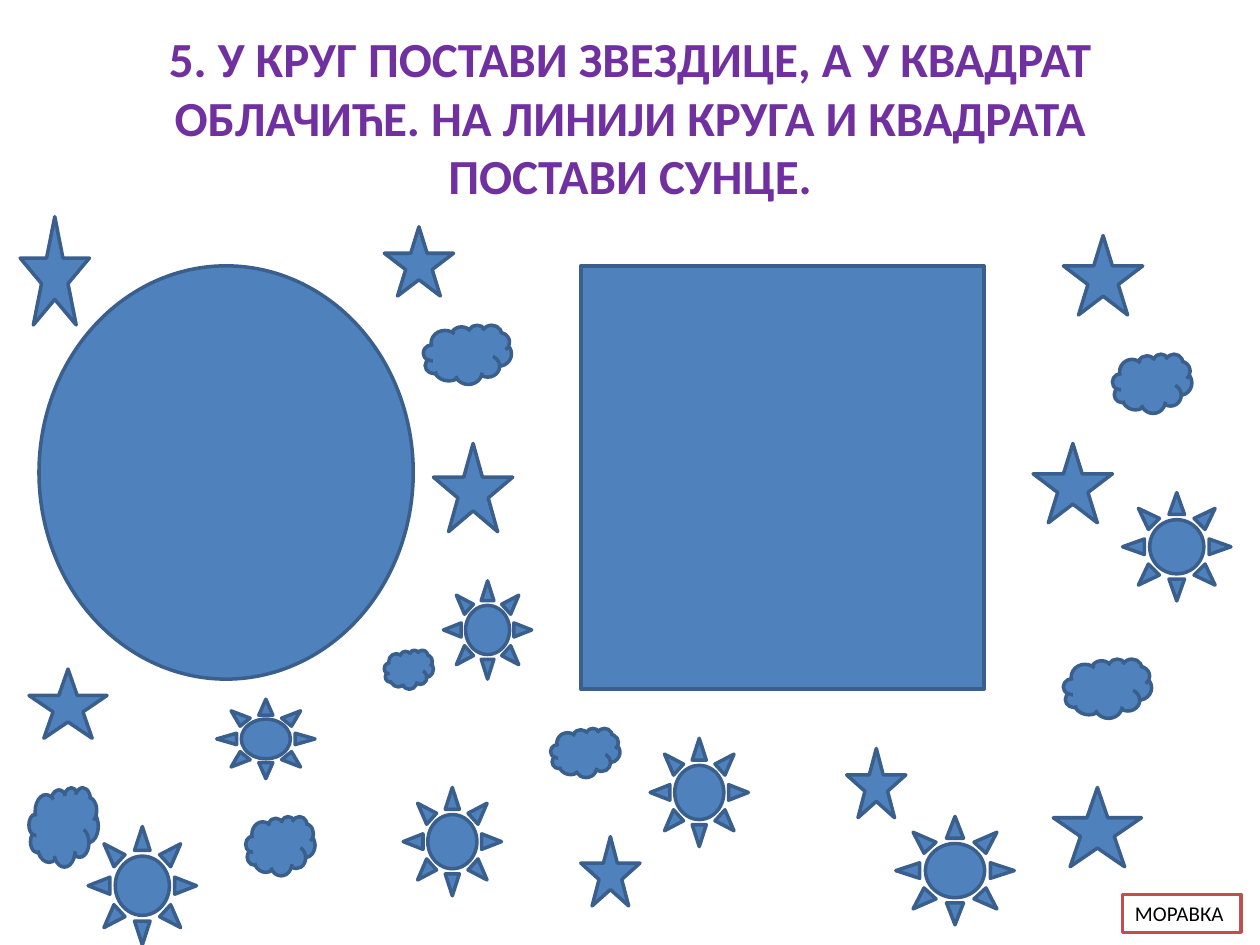
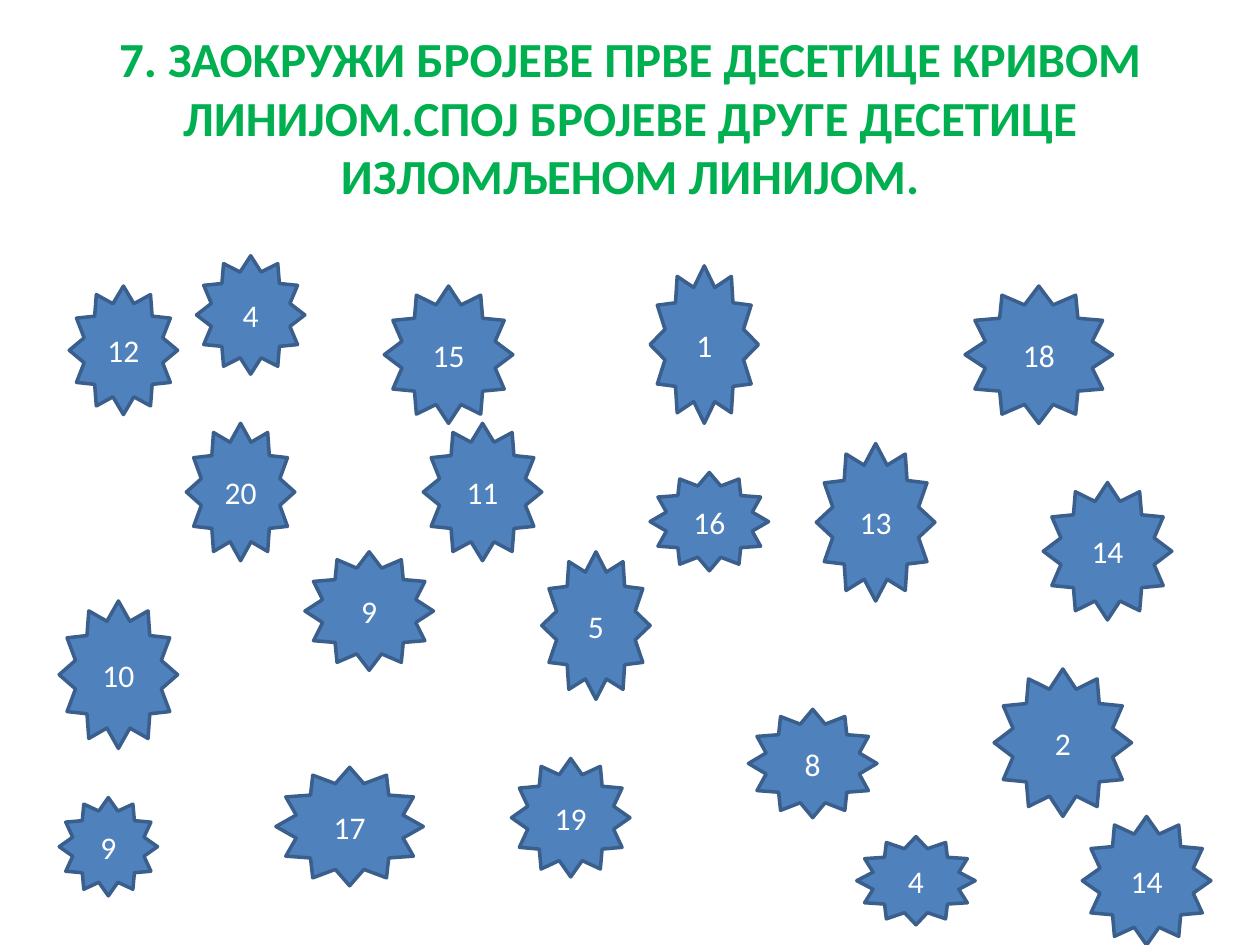
from dataclasses import dataclass
from typing import NamedTuple

from pptx import Presentation, util as u
from pptx.dml.color import RGBColor as Rgb
from pptx.enum import shapes, text

PX = u.Inches(1) // 100  # one px is a hundredth of an inch
Kind = shapes.MSO_SHAPE
Align = text.PP_ALIGN
Anchor = text.MSO_ANCHOR


# Shared look
@dataclass(frozen=True)
class Theme:
    font: str = "Calibri"
    page: Rgb = Rgb(0xFF, 0xFF, 0xFF)
    blue: Rgb = Rgb(0x4F, 0x81, 0xBD)
    edge: Rgb = Rgb(0x3A, 0x5F, 0x8C)
    red: Rgb = Rgb(0xC0, 0x50, 0x4D)
    ink: Rgb = Rgb(0x00, 0x00, 0x00)
    purple: Rgb = Rgb(0x70, 0x30, 0xA0)
    green: Rgb = Rgb(0x00, 0xB0, 0x50)
    head: int = 28
    digit: int = 18
    label: int = 12
    line: int = 2


THEME = Theme()


class Box(NamedTuple):
    x: int
    y: int
    w: int
    h: int


class Seal(NamedTuple):
    num: int
    box: Box


TITLE = Box(50, 30, 900, 125)
LABEL = Box(891, 710, 94, 30)

# Figures to sort, by kind
FIGURES = {
    Kind.OVAL: [Box(31, 211, 297, 328)],
    Kind.FLOWCHART_PROCESS: [Box(461, 211, 320, 336)],
    Kind.STAR_5_POINT: [
        Box(672, 594, 47, 55), Box(461, 664, 47, 55), Box(836, 625, 70, 63),
        Box(305, 180, 55, 55), Box(16, 172, 55, 86), Box(344, 352, 63, 70),
        Box(23, 531, 62, 55), Box(844, 187, 63, 63), Box(820, 352, 63, 63),
    ],
    Kind.CLOUD: [
        Box(305, 516, 39, 31), Box(336, 258, 70, 47), Box(195, 648, 55, 47),
        Box(23, 625, 55, 63), Box(437, 578, 55, 39), Box(844, 523, 70, 47),
        Box(883, 281, 63, 47),
    ],
    Kind.SUN: [
        Box(172, 555, 78, 63), Box(352, 461, 70, 78), Box(891, 391, 86, 86),
        Box(320, 625, 78, 86), Box(516, 586, 78, 86), Box(70, 656, 86, 94),
        Box(711, 648, 94, 86),
    ],
}

# Numbered seals
SEALS = [
    Seal(12, Box(55, 227, 86, 102)), Seal(20, Box(148, 336, 86, 109)),
    Seal(10, Box(47, 477, 94, 117)), Seal(15, Box(305, 227, 102, 109)),
    Seal(9, Box(242, 438, 102, 94)), Seal(17, Box(219, 609, 117, 94)),
    Seal(1, Box(516, 211, 86, 125)), Seal(5, Box(430, 438, 86, 117)),
    Seal(13, Box(648, 352, 94, 125)), Seal(8, Box(594, 563, 102, 86)),
    Seal(18, Box(766, 227, 117, 109)), Seal(2, Box(789, 531, 109, 117)),
    Seal(19, Box(406, 602, 94, 94)), Seal(9, Box(47, 633, 78, 78)),
    Seal(14, Box(828, 383, 102, 109)), Seal(11, Box(336, 336, 94, 109)),
    Seal(4, Box(680, 664, 94, 70)), Seal(4, Box(156, 203, 86, 94)),
    Seal(14, Box(859, 648, 102, 102)), Seal(16, Box(516, 375, 94, 78)),
]


def write(shape, words: str, size: int, tint: Rgb, bold: bool = False,
          align=Align.CENTER, anchor=Anchor.MIDDLE) -> None:
    frame = shape.text_frame
    frame.word_wrap = True
    frame.auto_size = text.MSO_AUTO_SIZE.NONE
    frame.vertical_anchor = anchor
    para = frame.paragraphs[0]
    para.alignment = align
    run = para.add_run()
    run.text = words
    font = run.font
    font.name, font.size, font.bold = THEME.font, u.Pt(size), bold
    font.color.rgb = tint


def draw(slide, kind, box: Box, fill: Rgb = THEME.blue, edge: Rgb = THEME.edge):
    shape = slide.shapes.add_shape(kind, *(n * PX for n in box))
    shape.shadow.inherit = False
    shape.fill.solid()
    shape.fill.fore_color.rgb = fill
    shape.line.color.rgb = edge
    shape.line.width = u.Pt(THEME.line)
    return shape


def start(deck, words: str, tint: Rgb):
    slide = deck.slides.add_slide(deck.slide_layouts[5])
    slide.background.fill.solid()
    slide.background.fill.fore_color.rgb = THEME.page
    title = slide.shapes.title
    title.left, title.top, title.width, title.height = (n * PX for n in TITLE)
    write(title, words, THEME.head, tint, bold=True)
    return slide


def sort_task(deck) -> None:
    slide = start(deck, "5. У КРУГ ПОСТАВИ ЗВЕЗДИЦЕ, А У КВАДРАТ ОБЛАЧИЋЕ. "
                  "НА ЛИНИЈИ КРУГА И КВАДРАТА ПОСТАВИ СУНЦЕ.", THEME.purple)
    for kind, boxes in FIGURES.items():
        for box in boxes:
            draw(slide, kind, box)
    label = draw(slide, Kind.RECTANGLE, LABEL, THEME.page, THEME.red)
    write(label, "МОРАВКА", THEME.label, THEME.ink,
          align=Align.LEFT, anchor=Anchor.TOP)


def count_task(deck) -> None:
    slide = start(deck, "7. ЗАОКРУЖИ БРОЈЕВЕ ПРВЕ ДЕСЕТИЦЕ КРИВОМ ЛИНИЈОМ."
                  "СПОЈ БРОЈЕВЕ ДРУГЕ ДЕСЕТИЦЕ ИЗЛОМЉЕНОМ ЛИНИЈОМ.", THEME.green)
    for seal in SEALS:
        shape = draw(slide, Kind.STAR_12_POINT, seal.box)
        write(shape, str(seal.num), THEME.digit, THEME.page)


def main() -> None:
    deck = Presentation()
    deck.slide_width, deck.slide_height = 1000 * PX, 750 * PX
    sort_task(deck)
    count_task(deck)
    deck.save("out.pptx")


if __name__ == "__main__":
    main()
